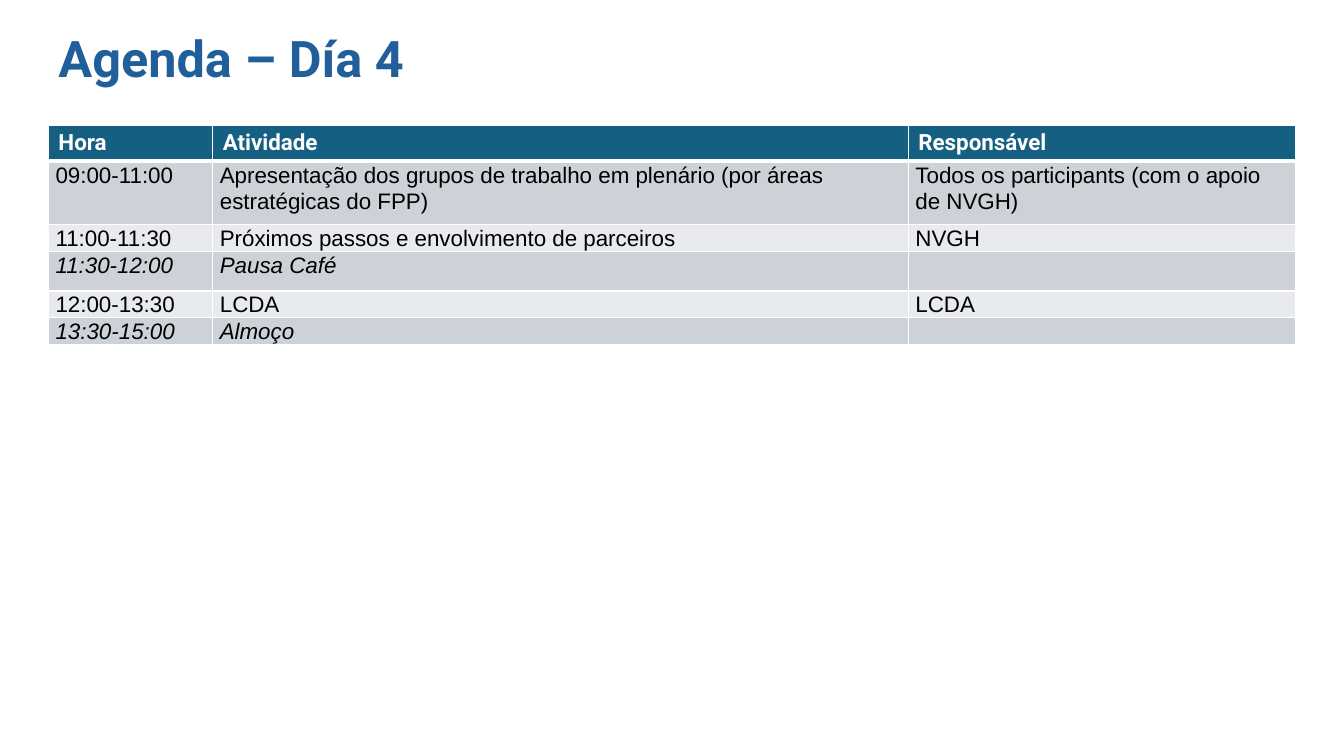
from dataclasses import dataclass

from lxml.etree import SubElement
from pptx import Presentation
from pptx.dml.color import RGBColor
from pptx.enum.text import MSO_ANCHOR, MSO_AUTO_SIZE, PP_ALIGN
from pptx.oxml import parse_xml
from pptx.oxml.ns import nsdecls, qn
from pptx.slide import Slide
from pptx.table import Table, _Cell
from pptx.util import Cm, Pt


@dataclass(frozen=True)
class Theme:
    """Colours, fonts and type sizes of the slide."""
    title: str = "215F9A"
    head: str = "156082"
    odd: str = "CCD2D8"
    even: str = "E8EAED"
    white: str = "FFFFFF"
    black: str = "000000"
    bold: str = "Roboto"
    plain: str = "Arial"
    large: int = 36
    small: int = 16


@dataclass(frozen=True)
class Item:
    """One agenda row, with its height in centimetres."""
    hour: str
    task: str
    lead: str
    high: float
    pause: bool = False


THEME = Theme()
WIDTHS = (4.14, 17.53, 9.75)
HEAD = Item("Hora", "Atividade", "Responsável", 0.71)
ITEMS = (
    Item("09:00-11:00",
         "Apresentação dos grupos de trabalho em plenário (por áreas estratégicas do FPP)",
         "Todos os participants (com o apoio de NVGH)", 1.6),
    Item("11:00-11:30", "Próximos passos e envolvimento de parceiros", "NVGH", 0.53),
    Item("11:30-12:00", "Pausa Café", "", 1.0, True),
    Item("12:00-13:30", "LCDA", "LCDA", 0.53),
    Item("13:30-15:00", "Almoço", "", 0.53, True),
)


def add_title(slide: Slide, text: str) -> None:
    """Place and format the title placeholder."""
    title = slide.shapes.title
    title.left, title.top = Cm(1.22), Cm(-0.3)
    title.width, title.height = Cm(29.21), Cm(3.68)
    frame = title.text_frame
    frame.text = text
    frame.auto_size = MSO_AUTO_SIZE.NONE
    frame.vertical_anchor = MSO_ANCHOR.MIDDLE
    para = frame.paragraphs[0]
    para.alignment = PP_ALIGN.LEFT
    para.line_spacing = 0.9
    font = para.runs[0].font
    font.name, font.size, font.bold = THEME.bold, Pt(THEME.large), True
    font.color.rgb = RGBColor.from_string(THEME.title)


def set_edges(cell: _Cell, row: int) -> None:
    """Draw white cell borders, thicker below the header row."""
    thick = {"T": 3 if row == 1 else 1, "B": 3 if row == 0 else 1}
    props = cell._tc.get_or_add_tcPr()
    for spot, side in enumerate("LRTB"):
        props.insert(spot, parse_xml(
            f'<a:ln{side} {nsdecls("a")} w="{Pt(thick.get(side, 1))}"><a:solidFill>'
            f'<a:srgbClr val="{THEME.white}"/></a:solidFill></a:ln{side}>'))


def fill_cell(cell: _Cell, text: str, row: int, pause: bool) -> None:
    """Write one cell and format it by its row."""
    head = row == 0
    shade = THEME.head if head else THEME.odd if row % 2 else THEME.even
    cell.fill.solid()
    cell.fill.fore_color.rgb = RGBColor.from_string(shade)
    set_edges(cell, row)
    cell.text_frame.text = text
    para = cell.text_frame.paragraphs[0]
    if not head:
        cell.margin_left = cell.margin_right = Cm(0.18)
        cell.margin_top = cell.margin_bottom = 0
        para.line_spacing, para.space_after = 1.07, Pt(8)
    for run in para.runs:
        font = run.font
        font.name = THEME.bold if head else THEME.plain
        font.size, font.bold, font.italic = Pt(THEME.small), head, pause
        font.color.rgb = RGBColor.from_string(THEME.white if head else THEME.black)
    if not text:
        SubElement(para._p, qn("a:endParaRPr"), sz=str(THEME.small * 100))


def fill_table(table: Table, items: tuple[Item, ...]) -> None:
    """Set the grid and fill every agenda row."""
    for column, width in zip(table.columns, WIDTHS):
        column.width = Cm(width)
    for row, item in enumerate(items):
        table.rows[row].height = Cm(item.high)
        for col, text in enumerate((item.hour, item.task, item.lead)):
            fill_cell(table.cell(row, col), text, row, item.pause)


def main() -> None:
    """Build and save the agenda slide."""
    deck = Presentation()
    deck.slide_width, deck.slide_height = Cm(33.87), Cm(19.05)
    slide = deck.slides.add_slide(deck.slide_layouts.get_by_name("Title Only"))
    add_title(slide, "Agenda – Día 4")
    items = (HEAD, *ITEMS)
    high = sum(item.high for item in items)
    frame = slide.shapes.add_table(len(items), len(WIDTHS), Cm(1.22), Cm(3.15),
                                   Cm(sum(WIDTHS)), Cm(high))
    fill_table(frame.table, items)
    deck.save("out.pptx")


if __name__ == "__main__":
    main()
